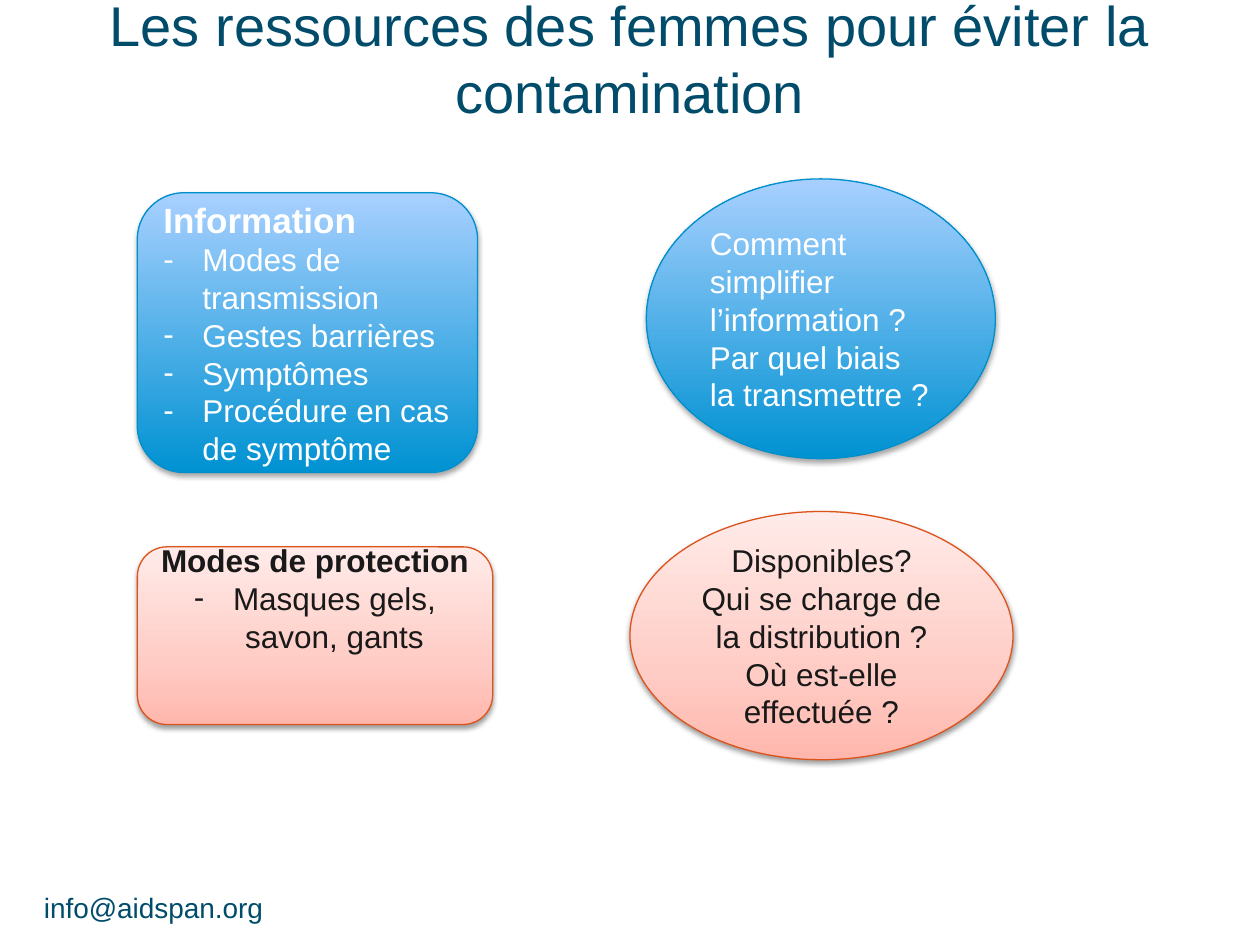
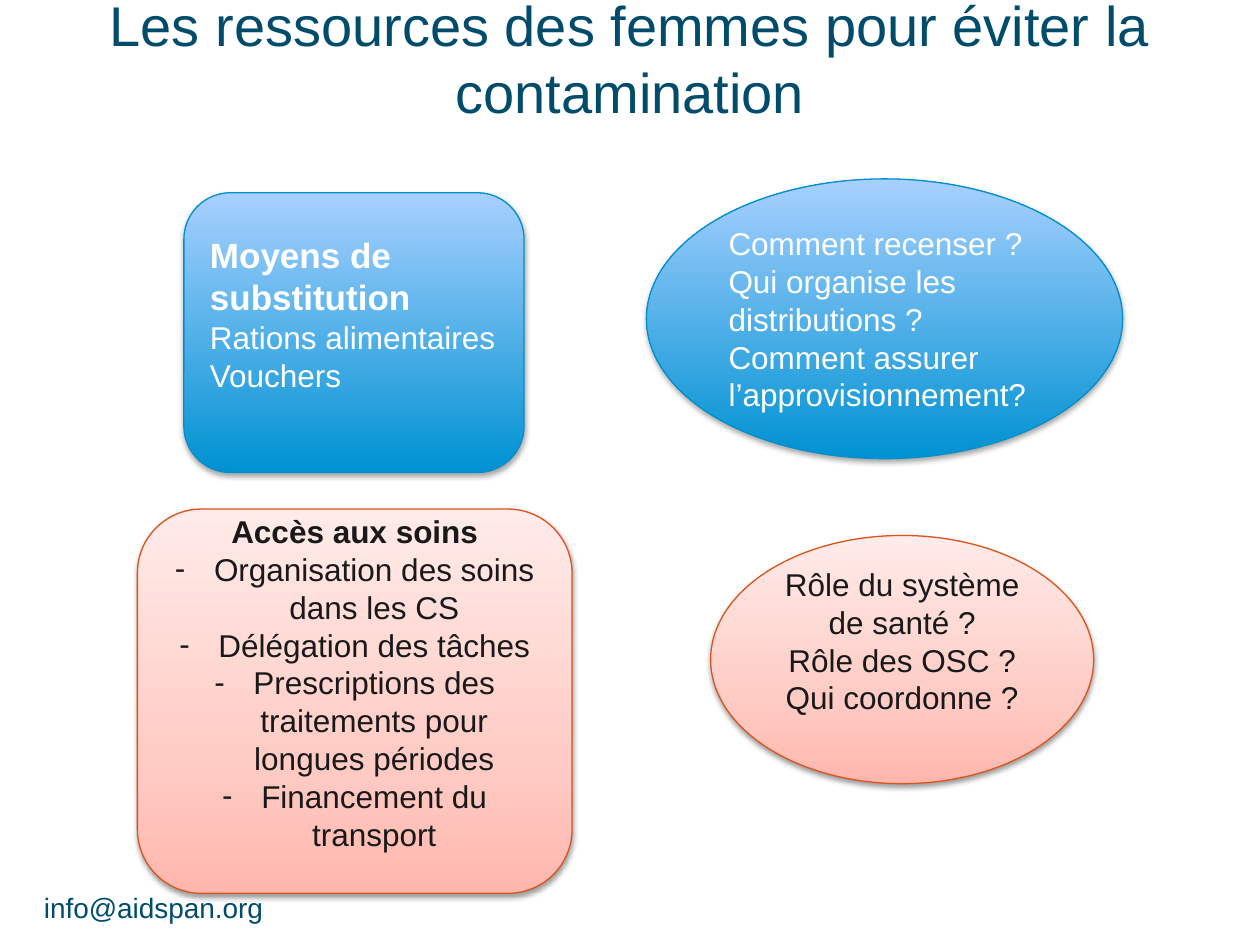
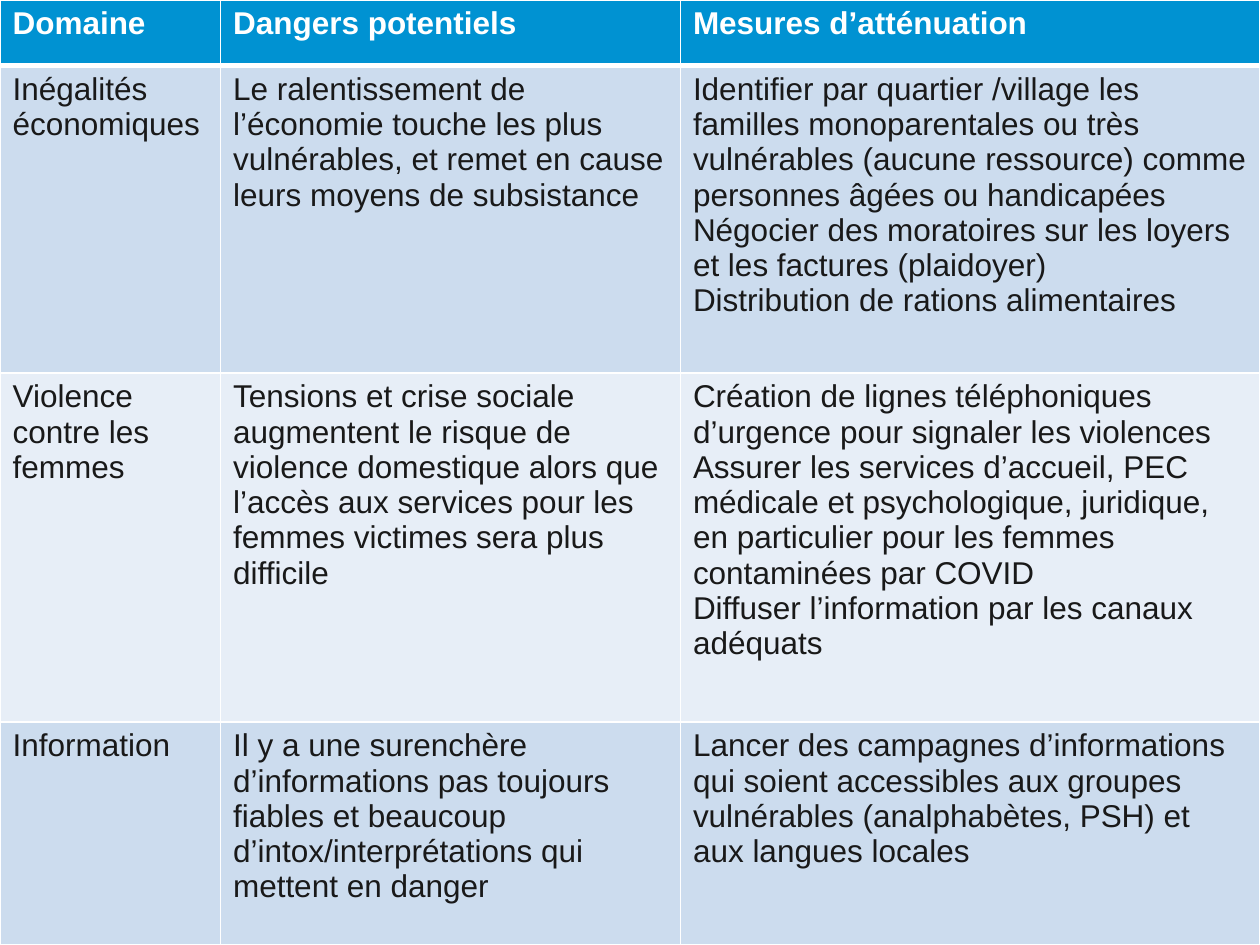
from lxml.etree import SubElement as Sub
from pptx import Presentation
from pptx.dml.color import RGBColor as Rgb
from pptx.enum.shapes import MSO_SHAPE as Form
from pptx.enum.text import MSO_ANCHOR as Anchor, MSO_AUTO_SIZE as Auto, PP_ALIGN as Align
from pptx.oxml.ns import qn
from pptx.util import Inches, Pt

HUES = {
    "title": "004C6A", "white": "FFFFFF", "ink": "191919",
    "head": "0092D2", "odd": "CCDCEE", "even": "E7EEF7",
}
LOOKS = {
    "blue": {"stops": [(0, "0092D2"), (100, "A8D0FF")], "line": "008FCD",
             "text": "white", "align": Align.LEFT, "alpha": 35, "drop": 1.8},
    "rose": {"stops": [(0, "FFB7AD"), (35, "FFCCC5"), (100, "FFEBE9")], "line": "DC541B",
             "text": "ink", "align": Align.CENTER, "alpha": 38, "drop": 1.6},
}
FONT = "Arial"
COLS, ROWS = 100, 75
LEAD = 1.2
BLANK = 0.3
INDENT = 0.31
TITLE = "Les ressources des femmes pour éviter la contamination"
MAIL = "info@aidspan.org"

BOARDS = [
    [
        ("blue", Form.ROUNDED_RECTANGLE, (10.9, 15.3, 27, 22.2), 0, [
            "# Information", "- Modes de transmission", "- Gestes barrières",
            "- Symptômes", "- Procédure en cas de symptôme"]),
        ("blue", Form.OVAL, (51.3, 14.2, 27.7, 22.2), 0, [
            "Comment simplifier l’information ?", "Par quel biais la transmettre ?"]),
        ("rose", Form.ROUNDED_RECTANGLE, (10.9, 43.4, 28.2, 14.1), 2, [
            "# Modes de protection", "- Masques gels, savon, gants"]),
        ("rose", Form.OVAL, (50, 40.6, 30.4, 19.7), 0, [
            "Disponibles?", "Qui se charge de la distribution ?", "Où est-elle effectuée ?"]),
    ],
    [
        ("blue", Form.ROUNDED_RECTANGLE, (14.6, 15.3, 27, 22.2), 1, [
            "# Moyens de substitution", "Rations alimentaires", "Vouchers"]),
        ("blue", Form.OVAL, (51.3, 14.2, 37.8, 22.2), 0, [
            "Comment recenser ?", "Qui organise les distributions ?",
            "Comment assurer l’approvisionnement?"]),
        ("rose", Form.ROUNDED_RECTANGLE, (10.9, 40.4, 34.5, 30.5), 1, [
            "# Accès aux soins", "- Organisation des soins dans les CS",
            "- Délégation des tâches", "- Prescriptions des traitements pour longues périodes",
            "- Financement du transport"]),
        ("rose", Form.OVAL, (56.4, 42.5, 30.4, 19.7), 1, [
            "Rôle du système de santé ?", "Rôle des OSC ?", "Qui coordonne ?"]),
    ],
]

RISKS = [
    [["Domaine"], ["Dangers potentiels"], ["Mesures d’atténuation"]],
    [["Inégalités économiques"],
     ["Le ralentissement de l’économie touche les plus vulnérables, et remet en cause "
      "leurs moyens de subsistance"],
     ["Identifier par quartier /village les familles monoparentales ou très vulnérables "
      "(aucune ressource) comme personnes âgées ou handicapées",
      "Négocier des moratoires sur les loyers et les factures (plaidoyer)",
      "Distribution de rations alimentaires"]],
    [["Violence contre les femmes"],
     ["Tensions et crise sociale augmentent le risque de violence domestique alors que "
      "l’accès aux services pour les femmes victimes sera plus difficile"],
     ["Création de lignes téléphoniques d’urgence pour signaler les violences",
      "Assurer les services d’accueil, PEC médicale et psychologique, juridique, "
      "en particulier pour les femmes contaminées par COVID",
      "Diffuser l’information par les canaux adéquats"]],
    [["Information"],
     ["Il y a une surenchère d’informations pas toujours fiables et beaucoup "
      "d’intox/interprétations qui mettent en danger"],
     ["Lancer des campagnes d’informations qui soient accessibles aux groupes "
      "vulnérables (analphabètes, PSH) et aux langues locales"]],
]


class Deck:
    def __init__(self):
        self.prs = Presentation()
        self.prs.slide_width, self.prs.slide_height = Inches(10), Inches(7.5)
        self.slide = None

    def page(self, layout):
        self.slide = self.prs.slides.add_slide(self.prs.slide_layouts[layout])

    def wide(self, cols):
        return int(self.prs.slide_width * cols / COLS)

    def tall(self, rows):
        return int(self.prs.slide_height * rows / ROWS)

    def area(self, x, y, w, h):
        return self.wide(x), self.tall(y), self.wide(w), self.tall(h)

    def words(self, frame, lines, hue, size, align=Align.LEFT, lead=LEAD, bold=False, big=None):
        for i, line in enumerate(lines):
            para = frame.paragraphs[0] if i == 0 else frame.add_paragraph()
            para.alignment = align
            mark = line[:2] if line[:2] in ("# ", "- ") else ""
            if mark == "- ":
                self.dash(para)
            high = big if mark == "# " and big else size
            if lead:
                para.line_spacing = Pt(high * lead)
            run = para.add_run()
            run.text = line[len(mark):]
            run.font.name, run.font.size = FONT, Pt(high)
            run.font.bold = bold or mark == "# "
            run.font.color.rgb = Rgb.from_string(HUES[hue])

    def dash(self, para):
        props = para._p.get_or_add_pPr()
        props.set("marL", str(Inches(INDENT)))
        props.set("indent", str(-Inches(INDENT)))
        Sub(props, qn("a:buFont"), typeface=FONT)
        Sub(props, qn("a:buChar"), char="-")

    def title(self, text):
        box = self.slide.shapes.title
        box.left, box.top, box.width, box.height = self.area(5, 1, 90, 7.2)
        frame = box.text_frame
        frame.word_wrap, frame.auto_size = True, Auto.NONE
        frame.vertical_anchor = Anchor.MIDDLE
        self.words(frame, [text], "title", 32, Align.CENTER)

    def foot(self, text):
        box = self.slide.shapes.add_textbox(*self.area(2.5, 70.2, 19.6, 3.7))
        box.text_frame.word_wrap = False
        self.words(box.text_frame, [text], "title", 16)

    def bubble(self, look, form, place, blanks, lines):
        style = LOOKS[look]
        shape = self.slide.shapes.add_shape(form, *self.area(*place))
        self.shade(shape, style["stops"])
        shape.line.color.rgb = Rgb.from_string(style["line"])
        shape.line.width = Pt(0.75)
        self.cast(shape, style["alpha"], style["drop"])
        frame = shape.text_frame
        frame.word_wrap = True
        frame.vertical_anchor = Anchor.MIDDLE
        frame.margin_bottom = Inches(0.05 + BLANK * blanks)
        big = 20 if look == "blue" else 18
        self.words(frame, lines, style["text"], 18, style["align"], big=big)

    def shade(self, shape, stops):
        shape.fill.gradient()
        grad = shape._element.spPr.find(qn("a:gradFill"))
        for child in list(grad):
            grad.remove(child)
        group = Sub(grad, qn("a:gsLst"))
        for at, hue in stops:
            stop = Sub(group, qn("a:gs"), pos=str(at * 1000))
            Sub(stop, qn("a:srgbClr"), val=hue)
        Sub(grad, qn("a:lin"), ang=str(270 * 60000), scaled="0")

    def cast(self, shape, alpha, drop):
        shape.shadow.inherit = False
        group = shape._element.spPr.find(qn("a:effectLst"))
        outer = Sub(group, qn("a:outerShdw"), blurRad=str(Pt(3.1)), dist=str(Pt(drop)),
                    dir=str(90 * 60000), rotWithShape="0")
        tint = Sub(outer, qn("a:srgbClr"), val="000000")
        Sub(tint, qn("a:alpha"), val=str(alpha * 1000))

    def grid(self, data, cols, rows):
        place = self.area(0, 0, sum(cols), sum(rows))
        table = self.slide.shapes.add_table(len(rows), len(cols), *place).table
        for col, size in zip(table.columns, cols):
            col.width = self.wide(size)
        for row, size in zip(table.rows, rows):
            row.height = self.tall(size)
        for r, line in enumerate(data):
            fill = "head" if r == 0 else "odd" if r % 2 else "even"
            for c, text in enumerate(line):
                cell = table.cell(r, c)
                self.edge(cell, {"L": 1, "R": 1, "T": 3 if r == 1 else 1, "B": 3 if r == 0 else 1})
                cell.fill.solid()
                cell.fill.fore_color.rgb = Rgb.from_string(HUES[fill])
                hue = "ink" if r else "white"
                self.words(cell.text_frame, text, hue, 18, lead=None, bold=r == 0)

    def edge(self, cell, sides):
        props = cell._tc.get_or_add_tcPr()
        for side, width in sides.items():
            line = Sub(props, qn("a:ln" + side), w=str(Pt(width)))
            Sub(Sub(line, qn("a:solidFill")), qn("a:srgbClr"), val=HUES["white"])


def main():
    deck = Deck()
    for board in BOARDS:
        deck.page(5)
        deck.foot(MAIL)
        deck.title(TITLE)
        for item in board:
            deck.bubble(*item)
    deck.page(6)
    deck.grid(RISKS, (17.5, 36.5, 46), (5.2, 24.4, 27.7, 17.7))
    deck.prs.save("out.pptx")


if __name__ == "__main__":
    main()
